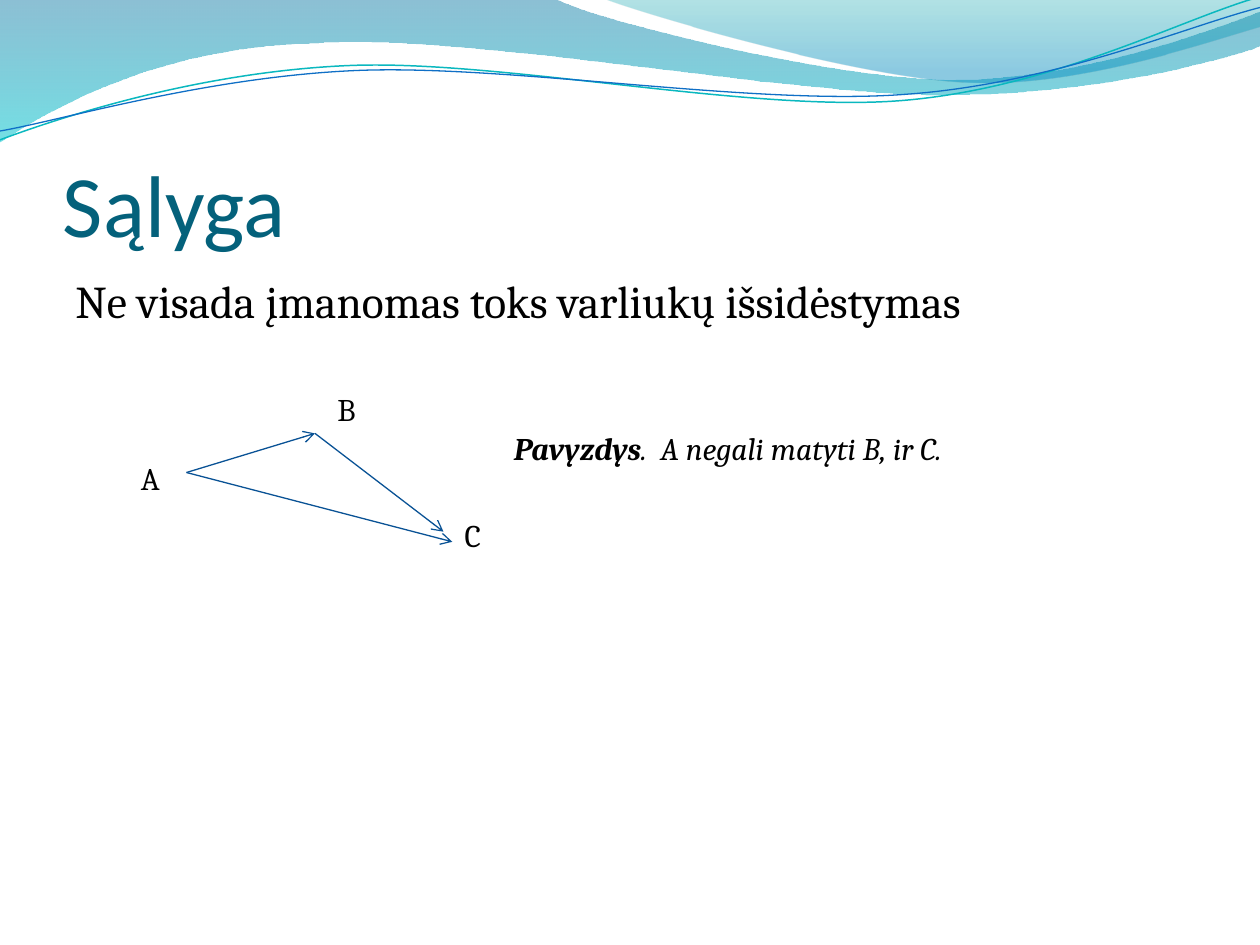
from math import cos, radians, sin

from lxml import etree
from pptx import Presentation
from pptx.dml.color import RGBColor
from pptx.enum.shapes import MSO_CONNECTOR
from pptx.enum.text import MSO_ANCHOR, MSO_AUTO_SIZE
from pptx.oxml.ns import qn
from pptx.util import Inches, Pt

STRAIGHT = MSO_CONNECTOR.STRAIGHT
TOP, BOTTOM = MSO_ANCHOR.TOP, MSO_ANCHOR.BOTTOM
FIT, FIXED = MSO_AUTO_SIZE.SHAPE_TO_FIT_TEXT, MSO_AUTO_SIZE.NONE
TILT = -2.7

# Each wave is a start point, then legs: 2 numbers for a line, 6 for a curve.
BACK = [(0, 0), (4.4, -0.01), (4.76, 0.17, 6.64, 0.63, 7.58, 0.63),
        (8.53, 0.63, 9.58, 0.26, 10, 0.09), (10.01, 0.36),
        (9.83, 0.44, 8.7, 0.76, 7.46, 0.75),
        (6.22, 0.75, 3.82, 0.28, 2.57, 0.34),
        (1.29, 0.36, 0.46, 0.83, -0.01, 1.13), (0, 0)]
FRONT = [(4.79, -0.01), (5.09, 0.11, 6.82, 0.62, 7.69, 0.65),
         (8.56, 0.69, 9.61, 0.32, 10, 0.21), (10, 0), (4.79, -0.01)]
TEAL = [(0, 1.11), (0.48, 0.93, 1.58, 0.57, 2.77, 0.52),
        (3.95, 0.47, 5.93, 0.89, 7.13, 0.8),
        (8.33, 0.71, 9.38, 0.15, 9.98, -0.02)]
BLUE = [(0, 1.04), (0.47, 0.96, 1.64, 0.61, 2.83, 0.56),
        (4.03, 0.51, 5.97, 0.84, 7.17, 0.75),
        (8.36, 0.67, 9.41, 0.21, 10, 0.06)]


def color(code):
    return RGBColor.from_string(code)


def pairs(leg):
    return list(zip(leg[::2], leg[1::2]))


def turn(legs, mid, angle):
    """Rotate all points about mid, clockwise in degrees."""
    c, s = cos(radians(angle)), sin(radians(angle))
    return [tuple(v for x, y in pairs(leg) for v in (
        mid[0] + (x - mid[0]) * c - (y - mid[1]) * s,
        mid[1] + (x - mid[0]) * s + (y - mid[1]) * c)) for leg in legs]


def add_wave(shapes, legs, close):
    """Lay out all points as a freeform, then join triples into curves."""
    dots = [(Inches(x), Inches(y)) for leg in legs for x, y in pairs(leg)]
    pen = shapes.build_freeform(*dots[0])
    pen.add_line_segments(dots[1:], close=close)
    wave = pen.convert_to_shape()
    wave.shadow.inherit = False
    lines = iter(list(wave._element.spPr.iter(qn("a:lnTo"))))
    for leg in legs[1:]:
        first = next(lines)
        if len(leg) == 6:
            first.tag = qn("a:cubicBezTo")
            for extra in (next(lines), next(lines)):
                first.append(extra[0])
                extra.getparent().remove(extra)
    return wave


def add_band(slide, legs, stops):
    """Draw a filled wave; stops are (position, colour, opacity in percent)."""
    band = add_wave(slide.shapes, legs, True)
    band.line.fill.background()
    band.fill.gradient()
    band.fill.gradient_angle = 270
    for stop, (place, code, _) in zip(band.fill.gradient_stops, stops):
        stop.position = place
        stop.color.rgb = color(code)
    tones = band._element.spPr.iter(qn("a:srgbClr"))
    for tone, (_, _, alpha) in zip(tones, stops):
        etree.SubElement(tone, qn("a:alpha"), val=str(alpha * 1000))


def set_line(line, code, width):
    line.color.rgb = color(code)
    line.width = Pt(width)


def add_curve(group, legs, mid, code, width):
    curve = add_wave(group.shapes, turn(legs, mid, -TILT), False)
    curve.rotation = TILT
    curve.fill.background()
    set_line(curve.line, code, width)


def add_arrow(slide, start, end):
    arrow = slide.shapes.add_connector(
        STRAIGHT, *(Inches(v) for v in start + end))
    set_line(arrow.line, "095295", 0.75)
    etree.SubElement(arrow.line._get_or_add_ln(), qn("a:tailEnd"), type="arrow")
    etree.SubElement(arrow._element.spPr, qn("a:effectLst"))


def add_text(slide, box, runs, size, name="Cambria", code="000000", **frame):
    """Add one paragraph; runs are (text, font values) pairs."""
    text = slide.shapes.add_textbox(*(Inches(v) for v in box)).text_frame
    look = {"word_wrap": True, "auto_size": FIXED, "vertical_anchor": TOP}
    for key, value in (look | frame).items():
        setattr(text, key, value)
    line = text.paragraphs[0]
    for words, style in runs:
        run = line.add_run()
        run.text = words
        run.font.color.rgb = color(code)
        for key, value in ({"size": Pt(size), "name": name} | style).items():
            setattr(run.font, key, value)
    return line


def main():
    deck = Presentation()
    deck.slide_width, deck.slide_height = Inches(10), Inches(7.5)
    slide = deck.slides.add_slide(deck.slide_layouts[6])

    add_band(slide, BACK, [(0, "0074A1", 45), (1, "00C6CF", 55)])
    add_band(slide, FRONT, [(0, "00A1A9", 30), (0.8, "008BBF", 45)])
    group = slide.shapes.add_group_shape()
    add_curve(group, TEAL, (4.99, 0.58), "0AB8BF", 0.85)
    add_curve(group, BLUE, (5, 0.59), "0F6FC6", 0.75)

    add_text(slide, (0.5, 0.77, 9, 1.25), [("Sąlyga", {})], 50, "Calibri",
             "04617B", vertical_anchor=BOTTOM, margin_left=0, margin_right=0,
             margin_bottom=0)
    body = add_text(slide, (0.5, 2.12, 8.56, 0.7),
                    [("Ne visada įmanomas toks varliukų išsidėstymas", {})], 26)
    body.space_before = Pt(5.2)

    a, b = (1.48, 3.75), (2.5, 3.44)
    for start, end in ((a, b), (b, (3.52, 4.22)), (a, (3.59, 4.3))):
        add_arrow(slide, start, end)
    for mark, x, y in (("A", 1.02, 3.59), ("B", 2.58, 3.05), ("C", 3.59, 4.05)):
        add_text(slide, (x, y, 0.36, 0.4), [(mark, {})], 18,
                 word_wrap=False, auto_size=FIT)
    add_text(slide, (3.98, 3.36, 3.91, 0.4),
             [("Pavyzdys", {"bold": True, "italic": True}),
              (".  A negali matyti B, ir C.", {"italic": True})], 18,
             auto_size=FIT)
    deck.save("out.pptx")


if __name__ == "__main__":
    main()
